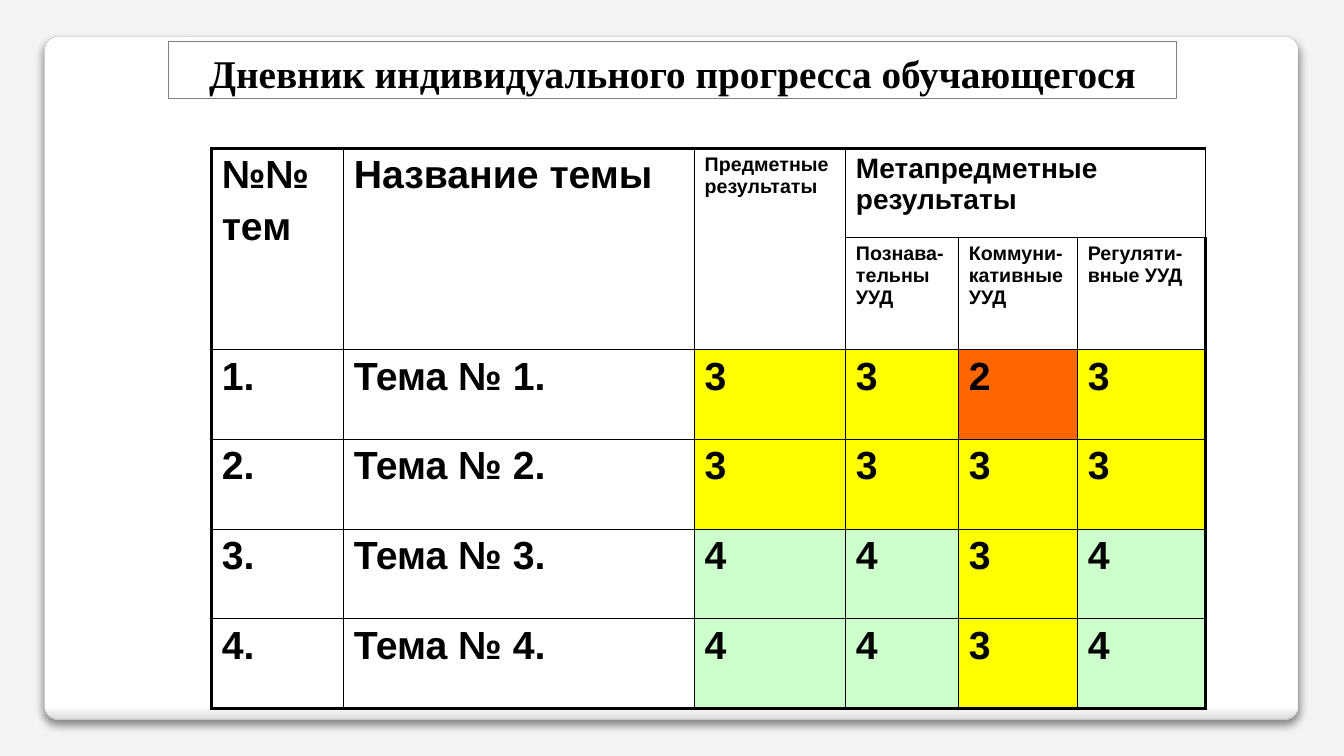
from dataclasses import dataclass

from lxml import etree
from pptx import Presentation
from pptx.dml.color import RGBColor
from pptx.enum.shapes import MSO_SHAPE
from pptx.enum.text import MSO_ANCHOR, PP_ALIGN
from pptx.oxml import parse_xml
from pptx.oxml.ns import nsdecls
from pptx.slide import Slide
from pptx.table import Table
from pptx.text.text import TextFrame
from pptx.util import Inches, Pt

ROUNDED = MSO_SHAPE.ROUNDED_RECTANGLE
RECTANGLE = MSO_SHAPE.RECTANGLE
LEFT, CENTER = PP_ALIGN.LEFT, PP_ALIGN.CENTER
MIDDLE = MSO_ANCHOR.MIDDLE

COLORS = {
    "backdrop": "F3F3F3",
    "white": "FFFFFF",
    "panel_edge": "DADADA",
    "panel_line": "A4A4A4",
    "title_line": "808080",
    "black": "000000",
    "2": "FF6600",
    "3": "FFFF00",
    "4": "CCFFCC",
}
COLUMN_WIDTHS = [1.31, 3.48, 1.5, 1.12, 1.18, 1.27]
ROW_HEIGHTS = [0.89, 1.11, 0.89, 0.89, 0.89, 0.89]
SCORES = ["3323", "3333", "4434", "4434"]
THIN, THICK = 1, 2.25


@dataclass(frozen=True)
class Heading:
    row: int
    column: int
    text: str
    size: int
    row_span: int = 1
    column_span: int = 1


HEADINGS = [
    Heading(0, 0, "№№\nтем", 28, row_span=2),
    Heading(0, 1, "Название темы", 28, row_span=2),
    Heading(0, 2, "Предметные результаты", 14, row_span=2),
    Heading(0, 3, "Метапредметные результаты", 20, column_span=3),
    Heading(1, 3, "Познава-тельны УУД", 14),
    Heading(1, 4, "Коммуни-кативные УУД", 14),
    Heading(1, 5, "Регуляти-вные УУД", 14),
]


def color(name: str) -> RGBColor:
    return RGBColor.from_string(COLORS[name])


def write_text(frame: TextFrame, text: str, *, size: int, font: str = "Arial",
               align: PP_ALIGN = LEFT) -> None:
    frame.word_wrap = True
    for index, line in enumerate(text.split("\n")):
        para = frame.add_paragraph() if index else frame.paragraphs[0]
        para.alignment = align
        para.space_before = Pt(round(size * 0.2, 1))
        span = para.add_run()
        span.text = line
        span.font.name = font
        span.font.size = Pt(size)
        span.font.bold = True
        span.font.color.rgb = color("black")


def add_panel(page: Slide) -> None:
    panel = page.shapes.add_shape(ROUNDED, Inches(0.44), Inches(0.36), Inches(12.44), Inches(6.78))
    panel.adjustments[0] = 0.021
    panel.fill.gradient()
    panel.fill.gradient_angle = 270
    stops = [(0.98, "white"), (1, "panel_edge")]
    for stop, (position, name) in zip(panel.fill.gradient_stops, stops):
        stop.position = position
        stop.color.rgb = color(name)
    panel.line.color.rgb = color("panel_line")
    panel.line.width = Pt(0.16)
    panel._element.spPr.append(parse_xml(
        f'<a:effectLst {nsdecls("a")}><a:outerShdw blurRad="{Pt(6)}" dist="{Pt(4)}" '
        f'dir="5400000" algn="t" rotWithShape="0"><a:srgbClr val="{COLORS["black"]}">'
        '<a:alpha val="45000"/></a:srgbClr></a:outerShdw></a:effectLst>'))


def add_title(page: Slide) -> None:
    box = page.shapes.add_shape(RECTANGLE, Inches(1.67), Inches(0.41), Inches(10), Inches(0.57))
    box.shadow.inherit = False
    box.fill.solid()
    box.fill.fore_color.rgb = color("white")
    box.line.color.rgb = color("title_line")
    box.line.width = Pt(0.75)
    frame = box.text_frame
    frame.vertical_anchor = MIDDLE
    frame.margin_top, frame.margin_bottom = Inches(0.08), Inches(0.02)
    write_text(frame, "Дневник индивидуального прогресса обучающегося",
               size=28, font="Times New Roman", align=CENTER)


def style_cell(table: Table, row: int, column: int, fill: str) -> None:
    cell = table.cell(row, column)
    cell.fill.solid()
    cell.fill.fore_color.rgb = color(fill)
    outer_sides = {
        "lnL": column == 0,
        "lnR": column == len(COLUMN_WIDTHS) - 1,
        "lnT": row == 0,
        "lnB": row == len(ROW_HEIGHTS) - 1,
    }
    properties = cell._tc.get_or_add_tcPr()
    for index, (side, outer) in enumerate(outer_sides.items()):
        width = Pt(THICK if outer else THIN)
        border = etree.fromstring(
            f'<a:{side} {nsdecls("a")} w="{width}"><a:solidFill>'
            f'<a:srgbClr val="{COLORS["black"]}"/></a:solidFill></a:{side}>')
        properties.insert(index, border)


def add_progress_table(page: Slide) -> None:
    table = page.shapes.add_table(
        len(ROW_HEIGHTS), len(COLUMN_WIDTHS), Inches(2.1), Inches(1.47),
        Inches(sum(COLUMN_WIDTHS)), Inches(sum(ROW_HEIGHTS))).table
    for column, width in zip(table.columns, COLUMN_WIDTHS):
        column.width = Inches(width)
    for row, height in zip(table.rows, ROW_HEIGHTS):
        row.height = Inches(height)

    for heading in HEADINGS:
        cell = table.cell(heading.row, heading.column)
        if heading.row_span * heading.column_span > 1:
            cell.merge(table.cell(heading.row + heading.row_span - 1,
                                  heading.column + heading.column_span - 1))
        write_text(cell.text_frame, heading.text, size=heading.size)
    for row in range(2):
        for column in range(len(COLUMN_WIDTHS)):
            style_cell(table, row, column, "white")

    for number, scores in enumerate(SCORES, start=1):
        row = number + 1
        for column, text in enumerate([f"{number}.", f"Тема № {number}.", *scores]):
            write_text(table.cell(row, column).text_frame, text, size=28)
            style_cell(table, row, column, text if column > 1 else "white")


def main() -> None:
    deck = Presentation()
    deck.slide_width, deck.slide_height = Inches(13.33), Inches(7.5)
    page = deck.slides.add_slide(deck.slide_layouts[6])
    page.background.fill.solid()
    page.background.fill.fore_color.rgb = color("backdrop")
    add_panel(page)
    add_title(page)
    add_progress_table(page)
    deck.save("out.pptx")


if __name__ == "__main__":
    main()
